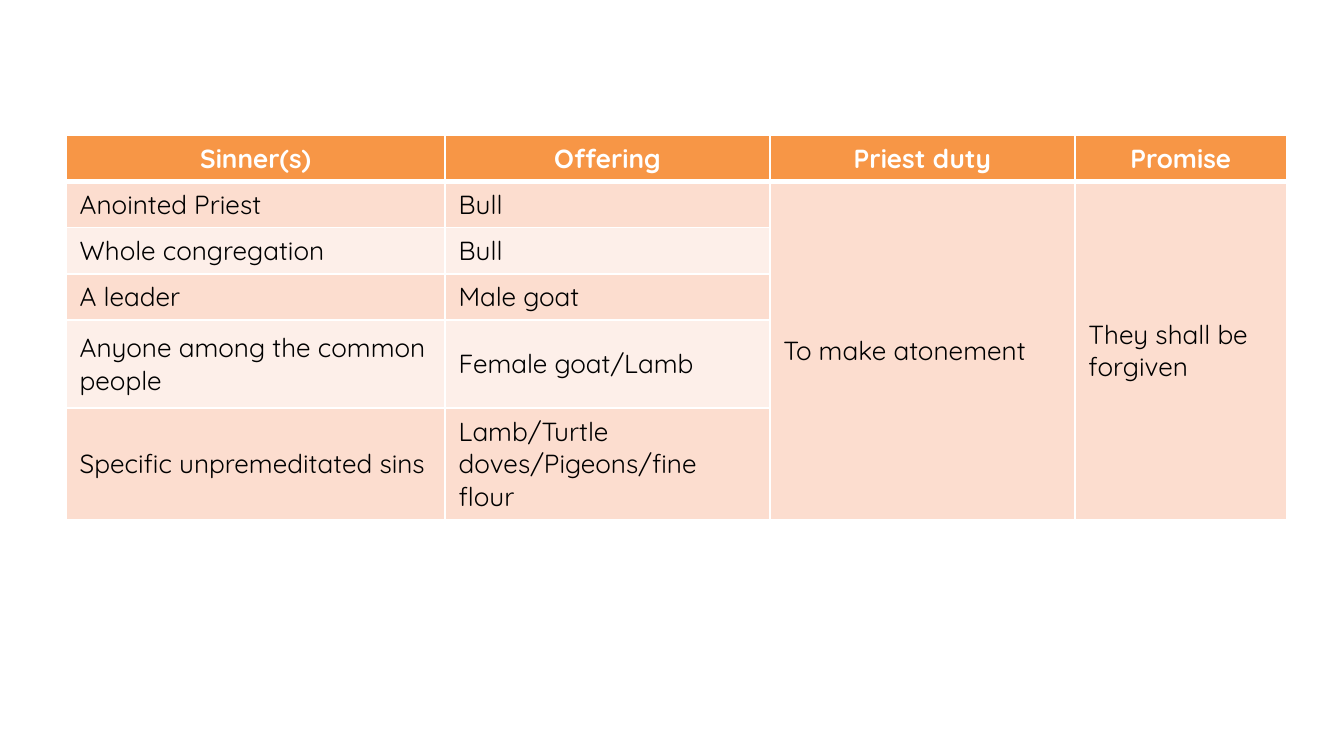
from pptx import Presentation
from pptx.dml.color import RGBColor
from pptx.enum.text import MSO_ANCHOR as Anchor, PP_ALIGN as Align
from pptx.oxml import parse_xml
from pptx.oxml.ns import nsdecls
from pptx.util import Pt

FONT = "Quicksand"
WHITE = RGBColor(0xFF, 0xFF, 0xFF)
BLACK = RGBColor(0x00, 0x00, 0x00)
ORANGE = RGBColor(0xF7, 0x96, 0x46)
PEACH = RGBColor(0xFC, 0xDD, 0xCF)
PALE_PEACH = RGBColor(0xFD, 0xEF, 0xE9)

HEADERS = ["Sinner(s)", "Offering", "Priest duty", "Promise"]
OFFERINGS = [
    ("Anointed Priest", "Bull"),
    ("Whole congregation", "Bull"),
    ("A leader", "Male goat"),
    ("Anyone among the common people", "Female goat/Lamb"),
    ("Specific unpremeditated sins", "Lamb/Turtle doves/Pigeons/fine flour"),
]
SHARED = ["To make atonement", "They shall be forgiven"]
COLUMN_WIDTHS = [203, 174, 163.4, 113.4]
ROW_HEIGHTS = [24.6, 24.6, 24.6, 24.6, 47.3, 59.7]


def write_text(cell, text, color=BLACK, bold=False, align=Align.LEFT, size=14):
    """Put formatted text in the middle of a cell."""
    cell.vertical_anchor = Anchor.MIDDLE
    paragraph = cell.text_frame.paragraphs[0]
    paragraph.alignment = align
    run = paragraph.add_run()
    run.text = text
    run.font.name = FONT
    run.font.size = Pt(size)
    run.font.bold = bold
    run.font.color.rgb = color


def style_cell(cell, fill, top=1, bottom=1):
    """Give a cell white borders and a solid fill."""
    properties = cell._tc.get_or_add_tcPr()
    for side, width in (("L", 1), ("R", 1), ("T", top), ("B", bottom)):
        properties.append(parse_xml(
            f'<a:ln{side} {nsdecls("a")} w="{Pt(width)}"><a:solidFill>'
            f'<a:srgbClr val="{WHITE}"/></a:solidFill></a:ln{side}>'))
    cell.fill.solid()
    cell.fill.fore_color.rgb = fill


def add_offerings_table(slide, left, top, width, height):
    """Place the table of sinners and offerings in the given box."""
    table = slide.shapes.add_table(
        len(ROW_HEIGHTS), len(HEADERS), Pt(left), Pt(top), Pt(width), Pt(height)).table
    for column, share in zip(table.columns, COLUMN_WIDTHS):
        column.width = Pt(width * share / sum(COLUMN_WIDTHS))
    for row, share in zip(table.rows, ROW_HEIGHTS):
        row.height = Pt(height * share / sum(ROW_HEIGHTS))

    for index, header in enumerate(HEADERS):
        cell = table.cell(0, index)
        style_cell(cell, ORANGE, bottom=3)
        write_text(cell, header, color=WHITE, bold=True, align=Align.CENTER)

    for row_index, offering in enumerate(OFFERINGS, start=1):
        band = PEACH if row_index % 2 else PALE_PEACH
        for index in range(len(HEADERS)):
            fill = band if index < len(offering) else PEACH
            style_cell(table.cell(row_index, index), fill, top=3 if row_index == 1 else 1)
        for index, text in enumerate(offering):
            write_text(table.cell(row_index, index), text)

    for index, text in enumerate(SHARED, start=2):
        cell = table.cell(1, index)
        cell.merge(table.cell(len(OFFERINGS), index))
        write_text(cell, text)


def main():
    """Build the presentation and save it."""
    presentation = Presentation()
    presentation.slide_width = Pt(720)
    presentation.slide_height = Pt(405)
    slide = presentation.slides.add_slide(presentation.slide_layouts[6])
    add_offerings_table(slide, 35.5, 72.4, sum(COLUMN_WIDTHS), sum(ROW_HEIGHTS))
    presentation.save("out.pptx")


if __name__ == "__main__":
    main()
